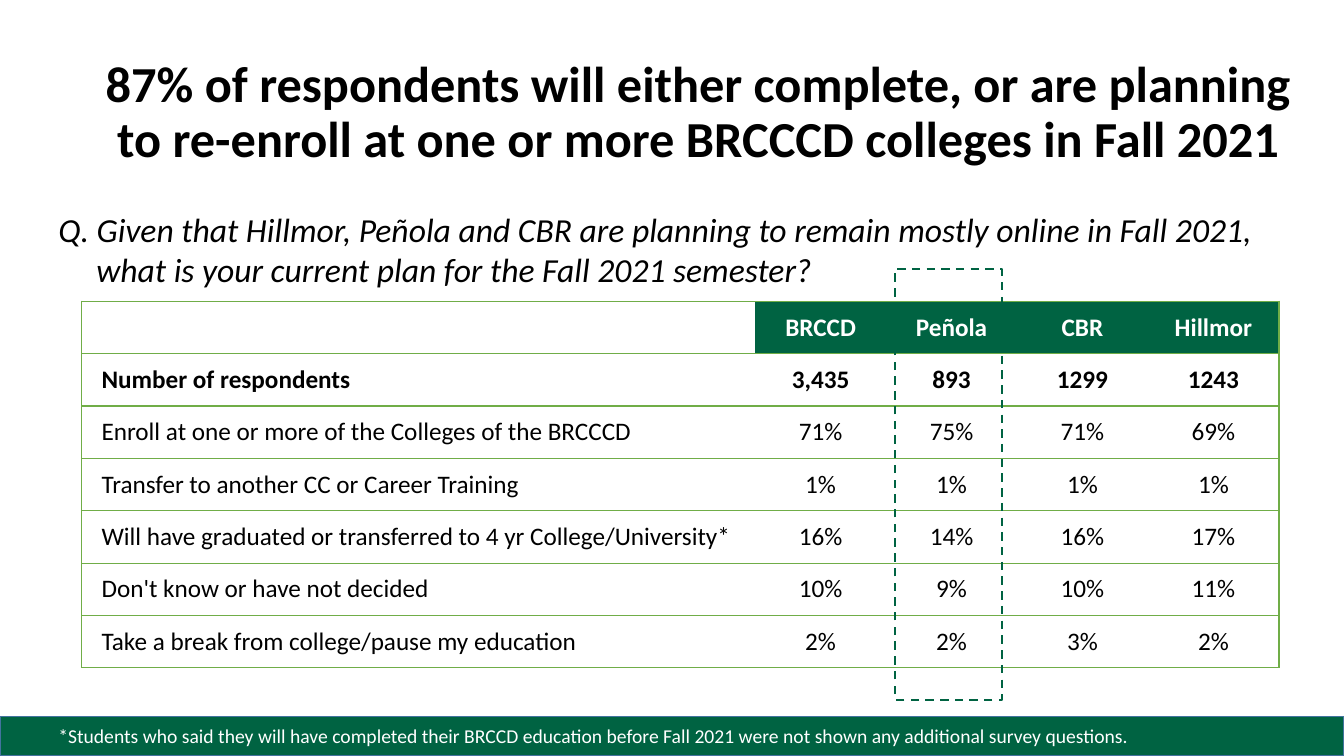
from lxml.etree import SubElement
from pptx import Presentation
from pptx.dml.color import RGBColor
from pptx.enum.dml import MSO_LINE
from pptx.enum.shapes import MSO_SHAPE
from pptx.enum.text import MSO_ANCHOR, PP_ALIGN
from pptx.oxml.ns import qn
from pptx.util import Cm, Pt

COLORS = {
    "green": "006342",
    "rule": "70AD47",
    "bar_edge": "43739E",
    "white": "FFFFFF",
    "black": "000000",
}
NO_STYLE = "{2D5ABB26-0587-4C30-8999-92F81FD0307C}"
SLIDE_WIDTH, SLIDE_HEIGHT = 33.87, 19.05

HEADLINE = (
    "87% of respondents will either complete, or are planning "
    "to re-enroll at one or more BRCCCD colleges in Fall 2021"
)
QUESTION = [
    "Q. Given that Hillmor, Peñola and CBR are planning to remain mostly online in Fall 2021,",
    "what is your current plan for the Fall 2021 semester?",
]
FOOTNOTE = (
    "*Students who said they will have completed their BRCCD education "
    "before Fall 2021 were not shown any additional survey questions."
)
PLANS = [
    ["", "BRCCD", "Peñola", "CBR", "Hillmor"],
    ["Number of respondents", "3,435", "893", "1299", "1243"],
    ["Enroll at one or more of the Colleges of the BRCCCD", "71%", "75%", "71%", "69%"],
    ["Transfer to another CC or Career Training", "1%", "1%", "1%", "1%"],
    ["Will have graduated or transferred to 4 yr College/University*", "16%", "14%", "16%", "17%"],
    ["Don't know or have not decided", "10%", "9%", "10%", "11%"],
    ["Take a break from college/pause my education", "2%", "2%", "3%", "2%"],
]


class SurveySlide:
    """Hold the font, the palette and the slide being filled."""

    def __init__(self, slide, font, colors):
        self.slide = slide
        self.font = font
        self.colors = colors

    def rgb(self, name):
        return RGBColor.from_string(self.colors[name])

    def add_run(self, paragraph, text, size, color, bold=False, italic=False):
        run = paragraph.add_run()
        run.text = text
        run.font.name = self.font
        run.font.size = Pt(size)
        run.font.bold = bold
        run.font.italic = italic
        run.font.color.rgb = self.rgb(color)

    def title(self, text, left, top, width, height):
        title = self.slide.shapes.title
        title.left, title.top, title.width, title.height = map(Cm, (left, top, width, height))
        title.text_frame.vertical_anchor = MSO_ANCHOR.MIDDLE
        paragraph = title.text_frame.paragraphs[0]
        paragraph.alignment = PP_ALIGN.CENTER
        paragraph.line_spacing = 0.9
        self.add_run(paragraph, text, 36, "black", bold=True)

    def text(self, lines, left, top, width, height, size, color, italic=False, hang=0):
        box = self.slide.shapes.add_textbox(*map(Cm, (left, top, width, height)))
        frame = box.text_frame
        frame.word_wrap = True
        for index, line in enumerate(lines):
            paragraph = frame.add_paragraph() if index else frame.paragraphs[0]
            self.add_run(paragraph, line, size, color, italic=italic)
            if index:
                paragraph._p.get_or_add_pPr().set("marL", str(Cm(hang)))

    def rectangle(self, left, top, width, height, line, weight, fill=None, dash=None):
        shape = self.slide.shapes.add_shape(
            MSO_SHAPE.RECTANGLE, *map(Cm, (left, top, width, height))
        )
        shape.shadow.inherit = False
        if fill:
            shape.fill.solid()
            shape.fill.fore_color.rgb = self.rgb(fill)
        else:
            shape.fill.background()
        shape.line.color.rgb = self.rgb(line)
        shape.line.width = Pt(weight)
        if dash:
            shape.line.dash_style = dash

    def borders(self, cell, sides, color):
        properties = cell._tc.get_or_add_tcPr()
        for index, side in enumerate(sides):
            line = SubElement(properties, qn(f"a:ln{side}"), w=str(Pt(1)))
            fill = SubElement(line, qn("a:solidFill"))
            SubElement(fill, qn("a:srgbClr"), val=self.colors[color])
            properties.insert(index, line)

    def table(self, rows, left, top, widths, row_height):
        frame = self.slide.shapes.add_table(
            len(rows), len(widths),
            *map(Cm, (left, top, sum(widths), row_height * len(rows))),
        )
        frame.element.xpath(".//a:tableStyleId")[0].text = NO_STYLE
        table = frame.table
        for column, width in zip(table.columns, widths):
            column.width = Cm(width)
        for row_index, values in enumerate(rows):
            table.rows[row_index].height = Cm(row_height)
            for column_index, value in enumerate(values):
                cell = table.cell(row_index, column_index)
                self.cell(cell, value, row_index, column_index)
                outer = {0: "L", len(widths) - 1: "R"}.get(column_index, "")
                self.borders(cell, outer + "TB", "rule")

    def cell(self, cell, value, row_index, column_index):
        heading = row_index == 0 and column_index > 0
        cell.fill.solid()
        cell.fill.fore_color.rgb = self.rgb("green" if heading else "white")
        cell.vertical_anchor = MSO_ANCHOR.MIDDLE
        cell.margin_left = cell.margin_right = Cm(0.5)
        cell.margin_top = cell.margin_bottom = 0
        paragraph = cell.text_frame.paragraphs[0]
        paragraph.alignment = PP_ALIGN.CENTER if column_index else PP_ALIGN.LEFT
        if value:
            color = "white" if heading else "black"
            self.add_run(paragraph, value, 18, color, bold=row_index < 2)


def main():
    presentation = Presentation()
    presentation.slide_width = Cm(SLIDE_WIDTH)
    presentation.slide_height = Cm(SLIDE_HEIGHT)
    title_only = presentation.slide_layouts[5]
    survey = SurveySlide(presentation.slides.add_slide(title_only), "Calibri", COLORS)

    survey.rectangle(0, 18.06, SLIDE_WIDTH, 0.99, "bar_edge", 1, fill="green")
    survey.title(HEADLINE, 2.34, 1.02, 30.53, 3.68)
    survey.table(PLANS, 2.06, 7.59, [16.97] + [3.3] * 4, 1.32)
    survey.text(QUESTION, 1.22, 5.13, 31.45, 2.31, 24, "black", italic=True, hang=0.96)
    survey.text([FOOTNOTE], 1.22, 18.11, 28, 0.86, 14, "white")
    survey.rectangle(22.56, 6.78, 2.69, 10.85, "green", 1.5, dash=MSO_LINE.DASH)

    presentation.save("out.pptx")


if __name__ == "__main__":
    main()
